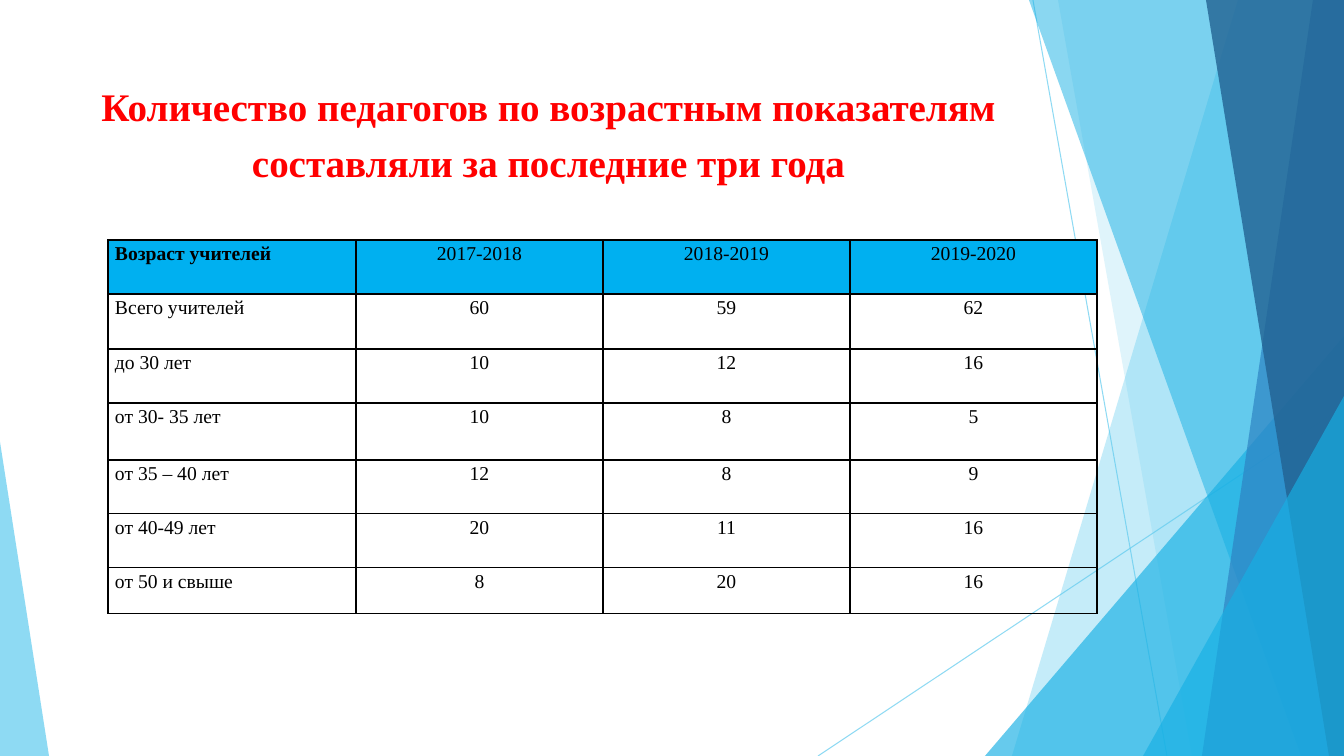
from lxml.etree import SubElement
from pptx import Presentation
from pptx.dml.color import RGBColor
from pptx.enum.shapes import MSO_CONNECTOR as Connector, MSO_SHAPE as Shape
from pptx.enum.text import MSO_ANCHOR as Anchor, PP_ALIGN as Align
from pptx.oxml import parse_xml
from pptx.oxml.ns import nsdecls, qn
from pptx.util import Pt

PX = 12192000 / 1344
WIDTH, HEIGHT = 1344, 756

RED = RGBColor(0xFF, 0x00, 0x00)
BLACK = RGBColor(0x00, 0x00, 0x00)
HEADER_BLUE = RGBColor(0x00, 0xB0, 0xF0)
SKY = RGBColor(0x5F, 0xCB, 0xEF)
CYAN = RGBColor(0x17, 0xB0, 0xE4)
BLUE = RGBColor(0x2E, 0x83, 0xC3)
NAVY = RGBColor(0x22, 0x62, 0x92)

TITLE = "Количество педагогов по возрастным показателям составляли за последние три года"
TITLE_BOX = (75, 68, 947, 145)
TITLE_FONT = {"name": "Times New Roman", "size": Pt(27.9), "bold": True}

TEACHERS = [
    ("Возраст учителей", "2017-2018", "2018-2019", "2019-2020"),
    ("Всего учителей", "60", "59", "62"),
    ("до 30 лет", "10", "12", "16"),
    ("от 30- 35 лет", "10", "8", "5"),
    ("от 35 – 40 лет", "12", "8", "9"),
    ("от 40-49 лет", "20", "11", "16"),
    ("от 50 и свыше", "8", "20", "16"),
]
TABLE_LEFT, TABLE_TOP = 108, 240
COLUMN_WIDTHS = [248, 247, 247, 247]
ROW_HEIGHTS = [54, 55, 54, 57, 54, 54, 46]
CELL_FORMAT = {"margin_left": 7, "margin_right": 7, "margin_top": 0, "margin_bottom": 0}

RAYS = [(1033, 0, 1167, 756), (1344, 406, 818, 756)]
FACETS = [
    ("band", (1238, 1012), SKY, 36),
    ("band", (1058, 1192), SKY, 20),
    ("corner", (985, 336, 359, 1), CYAN, 66),
    ("band", (1029, 1301), CYAN, 50),
    ("band", (1313, 1202), BLUE, 70),
    ("band", (1206, 1329), NAVY, 80),
    ("corner", (1143, 396, 201, 1), CYAN, 66),
    ("corner", (0, 442, 49, 0), SKY, 70),
]


def px(length):
    """Turn px into EMU."""
    return round(length * PX)


def apply_format(target, values):
    """Set each named attribute on the target."""
    for name, value in values.items():
        setattr(target, name, value)


def set_opacity(properties, percent):
    """Make the colour in a fill or line partly transparent."""
    colour = next(properties.iter(qn("a:srgbClr")))
    SubElement(colour, qn("a:alpha"), val=str(percent * 1000))


def add_ray(shapes, ends):
    """Draw one thin slanted line."""
    ray = shapes.add_connector(Connector.STRAIGHT, *map(px, ends))
    ray.line.color.rgb = SKY
    ray.line.width = Pt(0.75)
    properties = ray.line._get_or_add_ln()
    set_opacity(properties, 70)
    properties.addnext(parse_xml(f"<a:effectLst {nsdecls('a')}/>"))


def add_facet(shapes, kind, place, colour, opacity):
    """Draw one translucent band or corner triangle."""
    if kind == "band":
        top_x, bottom_x = place
        outline = shapes.build_freeform(top_x, 0, scale=PX)
        outline.add_line_segments([(WIDTH, 0), (WIDTH, HEIGHT), (bottom_x, HEIGHT)], close=True)
        facet = outline.convert_to_shape()
    else:
        left, top, width, apex = place
        facet = shapes.add_shape(Shape.ISOSCELES_TRIANGLE, *map(px, (left, top, width, HEIGHT - top)))
        facet.adjustments[0] = apex
    facet.shadow.inherit = False
    facet.fill.solid()
    facet.fill.fore_color.rgb = colour
    facet.line.fill.background()
    set_opacity(facet.fill._xPr, opacity)


def write_title(title):
    """Place and format the title."""
    apply_format(title, dict(zip(("left", "top", "width", "height"), map(px, TITLE_BOX))))
    frame = title.text_frame
    apply_format(frame, {"text": TITLE, "word_wrap": True, "vertical_anchor": Anchor.TOP})
    paragraph = frame.paragraphs[0]
    apply_format(paragraph, {"alignment": Align.CENTER, "line_spacing": 1.2,
                             "space_before": Pt(6), "space_after": Pt(6)})
    apply_format(paragraph.runs[0].font, TITLE_FONT)
    paragraph.runs[0].font.color.rgb = RED


def write_cell(cell, text, is_header, is_label):
    """Fill in and format one table cell."""
    cell.text = text
    apply_format(cell, {name: px(margin) for name, margin in CELL_FORMAT.items()})
    paragraph = cell.text_frame.paragraphs[0]
    spacing = Pt(6 if is_header else 0)
    apply_format(paragraph, {"alignment": Align.JUSTIFY if is_label else Align.CENTER,
                             "line_spacing": 1.15, "space_before": spacing, "space_after": spacing})
    font = paragraph.runs[0].font
    apply_format(font, {"name": "Times New Roman", "size": Pt(14), "bold": is_header and is_label})
    font.color.rgb = BLACK
    if is_header:
        cell.fill.solid()
        cell.fill.fore_color.rgb = HEADER_BLUE
    else:
        cell.fill.background()
    properties = cell._tc.get_or_add_tcPr()
    for position, side in enumerate(("lnL", "lnR", "lnT", "lnB")):
        properties.insert(position, parse_xml(
            f'<a:{side} {nsdecls("a")} w="{Pt(1)}"><a:solidFill><a:srgbClr val="{BLACK}"/>'
            f'</a:solidFill></a:{side}>'))


def add_teachers(shapes):
    """Build the table of teachers by age and year."""
    box = (TABLE_LEFT, TABLE_TOP, sum(COLUMN_WIDTHS), sum(ROW_HEIGHTS))
    table = shapes.add_table(len(TEACHERS), len(COLUMN_WIDTHS), *map(px, box)).table
    apply_format(table, {"first_row": False, "horz_banding": False})
    for column, width in zip(table.columns, COLUMN_WIDTHS):
        column.width = px(width)
    for row, height, texts in zip(table.rows, ROW_HEIGHTS, TEACHERS):
        row.height = px(height)
        for index, (cell, text) in enumerate(zip(row.cells, texts)):
            write_cell(cell, text, texts is TEACHERS[0], index == 0)


def main():
    """Build and save the slide."""
    deck = Presentation()
    apply_format(deck, {"slide_width": px(WIDTH), "slide_height": px(HEIGHT)})
    shapes = deck.slides.add_slide(deck.slide_layouts[5]).shapes
    for ends in RAYS:
        add_ray(shapes, ends)
    for facet in FACETS:
        add_facet(shapes, *facet)
    write_title(shapes.title)
    add_teachers(shapes)
    deck.save("out.pptx")


if __name__ == "__main__":
    main()
